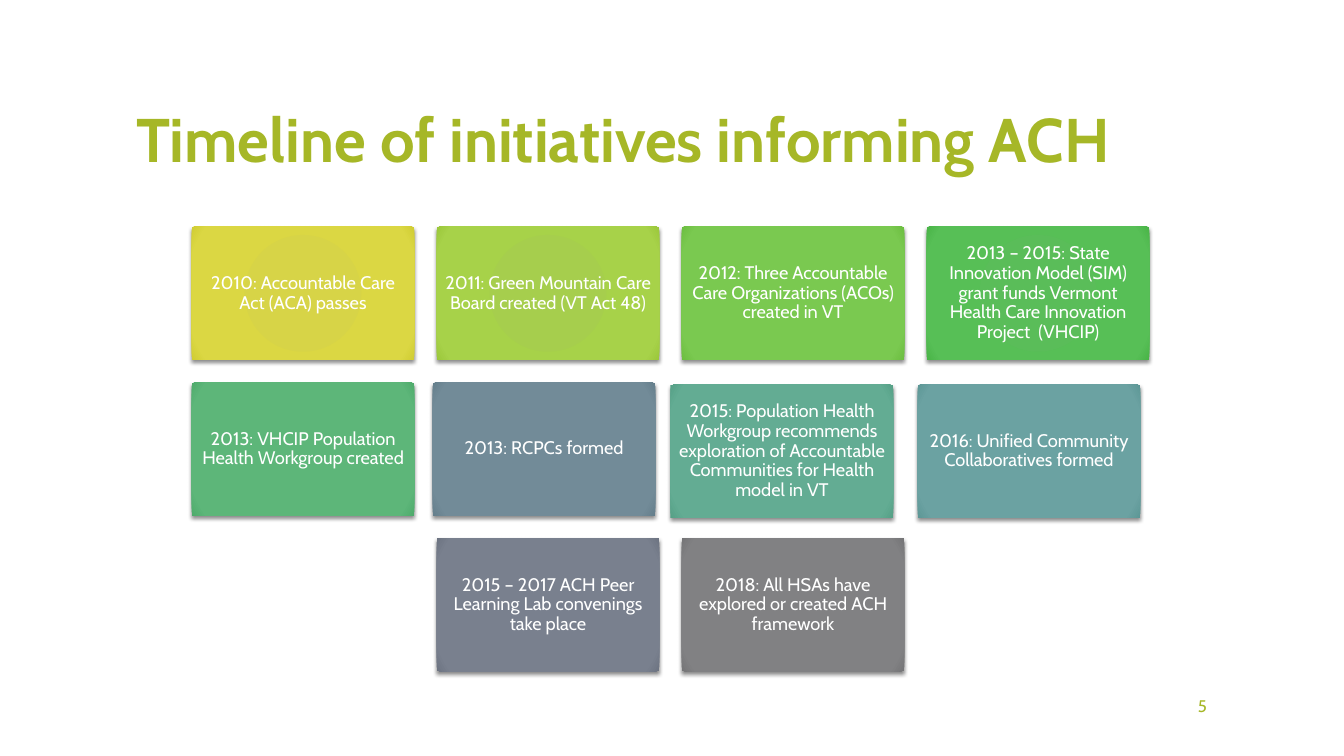
from dataclasses import dataclass

from lxml import etree
from pptx import Presentation
from pptx.dml.color import RGBColor
from pptx.enum.shapes import MSO_SHAPE
from pptx.enum.text import MSO_ANCHOR, MSO_AUTO_SIZE, PP_ALIGN
from pptx.oxml import parse_xml
from pptx.oxml.ns import nsdecls, qn
from pptx.util import Inches, Pt


@dataclass(frozen=True)
class Theme:
    font: str = "Cabin"
    accent: str = "A6B727"
    card_text: str = "FFFFFF"
    shadow: str = "000000"
    title_size: int = 44
    card_size: int = 13
    number_size: int = 12


THEME = Theme()

CARD_W, CARD_H = 2.21, 1.32
COLUMN_PITCH, ROW_PITCH = 2.43, 1.545

# Each card: row, column, nudge right, nudge down, gradient colours, text
CARDS = [
    (0, 0, 0, 0, ("D7D447", "DBD743", "D0CD33"),
     "2010: Accountable Care Act (ACA) passes"),
    (0, 1, 0, 0, ("A6CE4D", "A7D249", "9BC73A"),
     "2011: Green Mountain Care Board created (VT Act 48)"),
    (0, 2, 0, 0, ("7BC652", "7AC950", "6CBE40"),
     "2012: Three Accountable Care Organizations (ACOs) created in VT"),
    (0, 3, 0, 0, ("5ABD59", "57BF56", "49B447"),
     "2013 – 2015: State Innovation Model (SIM) grant funds Vermont "
     "Health Care Innovation Project  (VHCIP)"),
    (1, 0, 0, 0, ("5FB47A", "5DB679", "4EAB6C"),
     "2013: VHCIP Population Health Workgroup created"),
    (1, 1, -0.04, 0, ("738B97", "728B98", "657F8C"),
     "2013: RCPCs formed"),
    (1, 2, -0.11, 0.02, ("65AA93", "63AC93", "56A187"),
     "2015: Population Health Workgroup recommends exploration of "
     "Accountable Communities for Health model in VT"),
    (1, 3, -0.09, 0.02, ("6CA1A0", "6BA2A2", "5D9796"),
     "2016: Unified Community Collaboratives formed"),
    (2, 1, 0, 0, ("7A808D", "79808E", "6D7482"),
     "2015 – 2017 ACH Peer Learning Lab convenings take place"),
    (2, 2, 0, 0, ("818183", "818183", "757577"),
     "2018: All HSAs have explored or created ACH framework"),
]


def write(tf, text, size, color, align, bold=False):
    tf.text = text
    tf.word_wrap = True
    tf.auto_size = MSO_AUTO_SIZE.NONE
    tf.vertical_anchor = MSO_ANCHOR.MIDDLE
    p = tf.paragraphs[0]
    p.alignment = align
    p.line_spacing = 0.9
    font = p.runs[0].font
    font.name, font.size, font.bold = THEME.font, Pt(size), bold
    font.color.rgb = RGBColor.from_string(color)


def style_card(sp, colors):
    sp.line.fill.background()
    sp.shadow.inherit = False
    stops = "".join(
        f'<a:gs pos="{pos}"><a:srgbClr val="{color}"/></a:gs>'
        for pos, color in zip((0, 90000, 100000), colors))
    gradient = parse_xml(
        f'<a:gradFill {nsdecls("a")} rotWithShape="1"><a:gsLst>{stops}</a:gsLst>'
        '<a:path path="circle"><a:fillToRect l="100000" t="100000" '
        'r="100000" b="100000"/></a:path></a:gradFill>')
    spPr = sp.element.spPr
    spPr.find(qn("a:ln")).addprevious(gradient)
    shadow = etree.SubElement(
        spPr.find(qn("a:effectLst")), qn("a:outerShdw"),
        blurRad=str(Pt(3)), dist=str(Pt(2)), dir="5400000", rotWithShape="0")
    color = etree.SubElement(shadow, qn("a:srgbClr"), val=THEME.shadow)
    etree.SubElement(color, qn("a:alpha"), val="45000")


def add_title(slide, left, top, width, height):
    title = slide.shapes.title
    title.left, title.top = Inches(left), Inches(top)
    title.width, title.height = Inches(width), Inches(height)
    write(title.text_frame, "Timeline of initiatives informing ACH",
          THEME.title_size, THEME.accent, PP_ALIGN.LEFT, bold=True)


def add_card(slide, left, top, colors, text):
    sp = slide.shapes.add_shape(MSO_SHAPE.RECTANGLE, Inches(left), Inches(top),
                                Inches(CARD_W), Inches(CARD_H))
    style_card(sp, colors)
    tf = sp.text_frame
    tf.margin_left = tf.margin_right = Inches(0.05)
    tf.margin_top = tf.margin_bottom = Inches(0.05)
    write(tf, text, THEME.card_size, THEME.card_text, PP_ALIGN.CENTER)


def add_timeline(slide, left, top):
    for row, column, dx, dy, colors, text in CARDS:
        add_card(slide, left + column * COLUMN_PITCH + dx,
                 top + row * ROW_PITCH + dy, colors, text)


def add_slide_number(slide, left, top, width, height):
    box = slide.shapes.add_textbox(Inches(left), Inches(top),
                                   Inches(width), Inches(height))
    write(box.text_frame, "5", THEME.number_size, THEME.accent, PP_ALIGN.RIGHT)


def main():
    prs = Presentation()
    prs.slide_width, prs.slide_height = Inches(13.33), Inches(7.5)
    slide = prs.slides.add_slide(prs.slide_layouts[5])
    add_title(slide, 1.25, 0.67, 10.8, 1.48)
    add_timeline(slide, 1.9, 2.25)
    add_slide_number(slide, 10.2, 6.81, 1.87, 0.4)
    prs.save("out.pptx")


if __name__ == "__main__":
    main()
